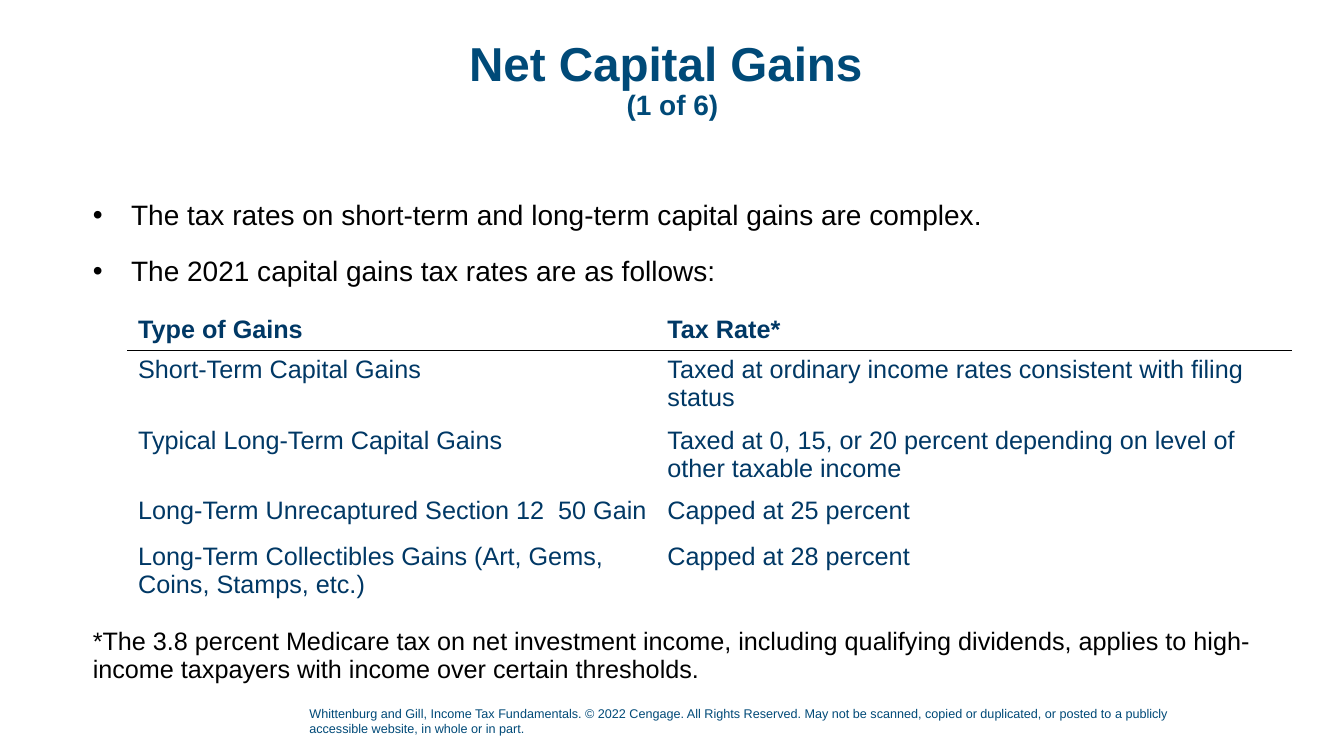
from lxml.etree import SubElement as Sub
from pptx import Presentation
from pptx.dml.color import RGBColor
from pptx.enum.text import MSO_ANCHOR as Anchor, MSO_AUTO_SIZE as Fit, PP_ALIGN as Align
from pptx.oxml import parse_xml
from pptx.oxml.ns import nsdecls, qn
from pptx.util import Inches, Pt

BLUE, NAVY, BLACK = "004A78", "003865", "000000"
POINTS = [
    "The tax rates on short-term and long-term capital gains are complex.",
    "The 2021 capital gains tax rates are as follows:",
]
RATES = [
    ("Type of Gains", "Tax Rate*"),
    ("Short-Term Capital Gains",
     "Taxed at ordinary income rates consistent with filing status"),
    ("Typical Long-Term Capital Gains",
     "Taxed at 0, 15, or 20 percent depending on level of other taxable income"),
    ("Long-Term Unrecaptured Section 12  50 Gain", "Capped at 25 percent"),
    ("Long-Term Collectibles Gains (Art, Gems, Coins, Stamps, etc.)",
     "Capped at 28 percent"),
]
NOTE = ("*The 3.8 percent Medicare tax on net investment income, including qualifying "
        "dividends, applies to high-income taxpayers with income over certain thresholds.")
RIGHTS = ("Whittenburg and Gill, Income Tax Fundamentals. © 2022 Cengage. All Rights "
          "Reserved. May not be scanned, copied or duplicated, or posted to a publicly "
          "accessible website, in whole or in part.")


def paint(color, tone):
    color.rgb = RGBColor.from_string(tone)


def add_text(par, text, size, tone, bold=False):
    run = par.add_run()
    run.text = text
    run.font.name = "Arial"
    run.font.size = Pt(size)
    run.font.bold = bold
    paint(run.font.color, tone)


def place(shape, box):
    shape.left, shape.top, shape.width, shape.height = map(Inches, box)
    frame = shape.text_frame
    frame.margin_left = frame.margin_right = 0
    frame.margin_top = frame.margin_bottom = 0
    frame.word_wrap = True
    frame.auto_size = Fit.NONE
    frame.vertical_anchor = Anchor.TOP
    return frame


def add_title(shape, box):
    par = place(shape, box).paragraphs[0]
    par.alignment = Align.CENTER
    par.line_spacing = 0.9
    par.space_before = Pt(0)
    add_text(par, "Net Capital Gains ", 34, BLUE, True)
    par.add_line_break()
    Sub(par._p.find(qn("a:br")), qn("a:rPr"), sz="3400")
    add_text(par, "(1 of 6)", 20, BLUE, True)


def add_body(shape, box, lines, size, mark=None):
    frame = place(shape, box)
    for i, line in enumerate(lines):
        par = frame.add_paragraph() if i else frame.paragraphs[0]
        par.line_spacing = 0.9
        par.space_before = Pt(10 if i else 0)
        par.space_after = Pt(8)
        props = par._p.get_or_add_pPr()
        dent = Inches(0.38) if mark else 0
        props.set("marL", str(dent))
        props.set("indent", str(-dent))
        if mark:
            Sub(props, qn("a:buChar"), char=mark)
        else:
            Sub(props, qn("a:buNone"))
        add_text(par, line, size, BLACK)


def add_rule(cell, side):
    cell._tc.get_or_add_tcPr().insert(0, parse_xml(
        f'<a:{side} {nsdecls("a")} w="12700"><a:solidFill>'
        f'<a:srgbClr val="{BLACK}"/></a:solidFill></a:{side}>'))


def add_rates(slide, box):
    table = slide.shapes.add_table(len(RATES), 2, *map(Inches, box)).table
    table.first_row = table.horz_banding = False
    for col, width in zip(table.columns, (5.25, 6.29)):
        col.width = Inches(width)
    for row, high in zip(table.rows, (0.34, 0.45, 0.59, 0.45, 0.75)):
        row.height = Inches(high)
    for r, line in enumerate(RATES):
        for c, text in enumerate(line):
            cell = table.cell(r, c)
            cell.fill.background()
            add_text(cell.text_frame.paragraphs[0], text, 18, NAVY, r == 0)
            if r < 2:
                add_rule(cell, ("lnB", "lnT")[r])


def add_rights(slide, box):
    frame = slide.shapes.add_textbox(*map(Inches, box)).text_frame
    frame.word_wrap = True
    add_text(frame.paragraphs[0], RIGHTS, 9, BLUE)


def main():
    deck = Presentation()
    deck.slide_width, deck.slide_height = Inches(13.33), Inches(7.5)
    slide = deck.slides.add_slide(deck.slide_layouts[3])
    title, body, note = slide.placeholders
    add_rights(slide, (2.97, 6.95, 9.29, 0.4))
    add_title(title, (0.92, 0.4, 11.5, 0.74))
    add_body(body, (0.92, 2, 11.9, 1.93), POINTS, 20, "•")
    add_rates(slide, (1.27, 3.08, 11.54, 2.58))
    add_body(note, (0.92, 6.24, 11.9, 0.59), [NOTE], 18)
    deck.save("out.pptx")


if __name__ == "__main__":
    main()
